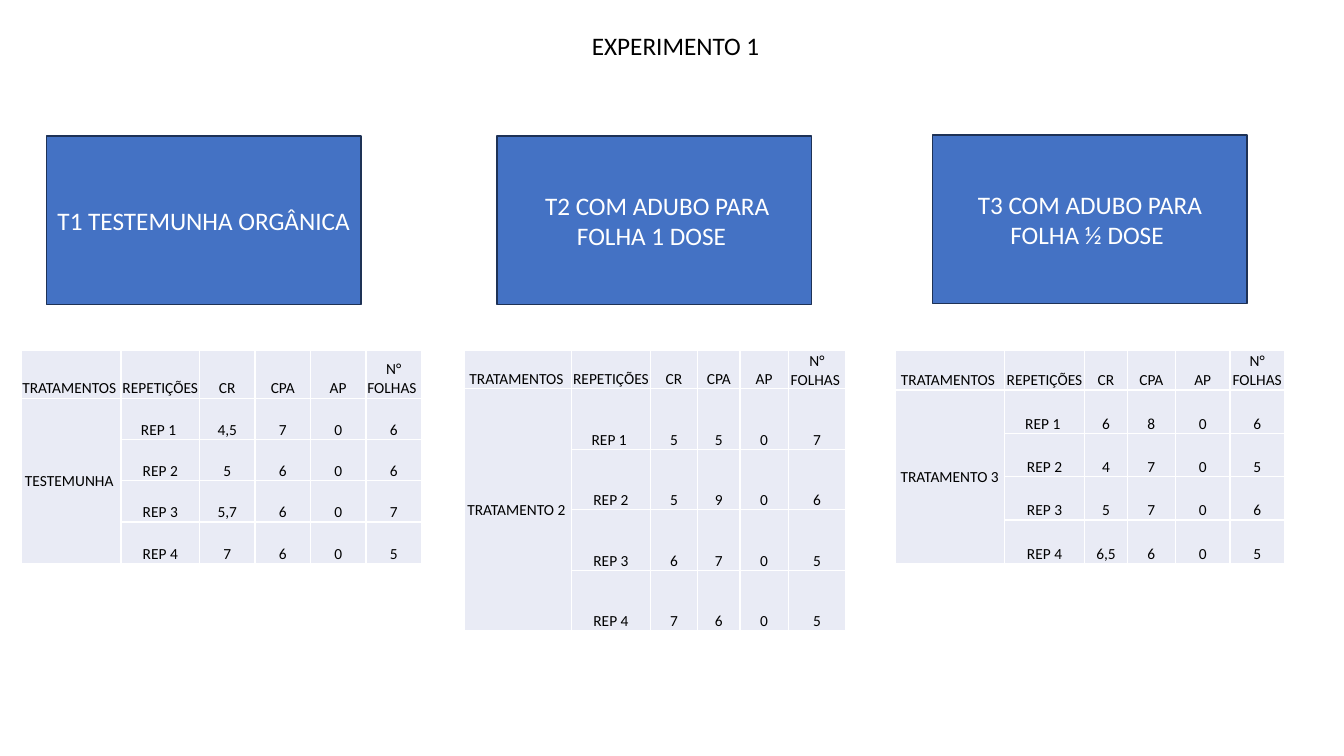
from pptx import Presentation
from pptx.dml.color import RGBColor
from pptx.enum import shapes, text
from pptx.oxml import parse_xml
from pptx.oxml import ns
from pptx.util import Inches, Pt

BLACK = RGBColor(0x00, 0x00, 0x00)
WHITE = RGBColor(0xFF, 0xFF, 0xFF)
BLUE = RGBColor(0x44, 0x72, 0xC4)
NAVY = RGBColor(0x1E, 0x32, 0x56)
PALE = RGBColor(0xE9, 0xEB, 0xF5)

TITLE = "EXPERIMENTO 1"
HEADINGS = ["TRATAMENTOS ", "REPETIÇÕES ", "CR", "CPA", "AP", "N° FOLHAS "]
REPETITIONS = ["REP 1 ", "REP 2", "REP 3", "REP 4"]
TREATMENTS = [
    {
        "label": "T1 TESTEMUNHA ORGÂNICA", "box": (0.46, 1.35),
        "group": "TESTEMUNHA ", "left": 0.21,
        "columns": [0.99, 0.78, 0.55, 0.55, 0.55, 0.55],
        "heights": (0.47, 0.41),
        "values": [("4,5", "7", "0", "6"), ("5", "6", "0", "6"),
                   ("5,7", "6", "0", "7"), ("7", "6", "0", "5")],
    },
    {
        "label": " T2 COM ADUBO PARA FOLHA 1 DOSE ", "box": (4.93, 1.35),
        "group": "TRATAMENTO 2 ", "left": 4.61,
        "columns": [1.06, 0.78, 0.47, 0.42, 0.48, 0.57],
        "heights": (0.28, 0.6),
        "values": [("5", "5", "0", "7"), ("5", "9", "0", "6"),
                   ("6", "7", "0", "5"), ("7", "6", "0", "5")],
    },
    {
        "label": "T3 COM ADUBO PARA FOLHA ½ DOSE ", "box": (9.25, 1.34),
        "group": "TRATAMENTO 3", "left": 8.88,
        "columns": [1.08, 0.8, 0.42, 0.48, 0.54, 0.54],
        "heights": (0.39, 0.43),
        "values": [("6", "8", "0", "6"), ("4", "7", "0", "5"),
                   ("5", "7", "0", "6"), ("6,5", "6", "0", "5")],
    },
]
BOX_SIZE = (3.12, 1.67)
TABLE_TOP = 3.48
CELL_FORMAT = {
    "margin_left": Inches(0.01), "margin_right": Inches(0.01),
    "margin_top": Inches(0.01), "margin_bottom": 0,
    "vertical_anchor": text.MSO_ANCHOR.BOTTOM,
}


def apply(target, values):
    """Set each named attribute on the target."""
    for name, value in values.items():
        setattr(target, name, value)


def write(frame, words, size, color, align):
    """Put one formatted paragraph in a text frame."""
    para = frame.paragraphs[0]
    para.alignment = align
    span = para.add_run()
    span.text = words
    apply(span.font, {"name": "Calibri", "size": Pt(size), "bold": False})
    span.font.color.rgb = color


def add_title(page):
    """Place the slide title."""
    title = page.shapes.title
    apply(title, {"left": Inches(5.77), "top": Inches(0.25),
                  "width": Inches(1.94), "height": Inches(0.4)})
    apply(title.text_frame, {"word_wrap": False,
                             "auto_size": text.MSO_AUTO_SIZE.SHAPE_TO_FIT_TEXT,
                             "vertical_anchor": text.MSO_ANCHOR.TOP})
    write(title.text_frame, TITLE, 18, BLACK, text.PP_ALIGN.LEFT)


def add_box(page, treatment):
    """Draw the blue box that names a treatment."""
    place = [Inches(length) for length in treatment["box"] + BOX_SIZE]
    box = page.shapes.add_shape(shapes.MSO_SHAPE.RECTANGLE, *place)
    box.shadow.inherit = False
    box.fill.solid()
    box.fill.fore_color.rgb = BLUE
    box.line.color.rgb = NAVY
    box.line.width = Pt(1)
    apply(box.text_frame, {"word_wrap": True,
                           "vertical_anchor": text.MSO_ANCHOR.MIDDLE})
    write(box.text_frame, treatment["label"], 18, WHITE, text.PP_ALIGN.CENTER)


def format_cell(cell):
    """Give a cell its margins, white borders and pale fill."""
    apply(cell, CELL_FORMAT)
    properties = cell._tc.get_or_add_tcPr()
    for side in "LRTB":
        properties.append(parse_xml(
            f'<a:ln{side} {ns.nsdecls("a")} w="{Pt(1)}"><a:solidFill>'
            f'<a:srgbClr val="{WHITE}"/></a:solidFill></a:ln{side}>'))
    cell.fill.solid()
    cell.fill.fore_color.rgb = PALE


def add_results(page, treatment):
    """Draw the table of results for a treatment."""
    rows = [HEADINGS]
    for index, (repetition, values) in enumerate(zip(REPETITIONS, treatment["values"])):
        group = treatment["group"] if index == 0 else ""
        rows.append([group, repetition, *values])
    header, body = treatment["heights"]
    heights = [header] + [body] * len(REPETITIONS)
    table = page.shapes.add_table(
        len(rows), len(HEADINGS), Inches(treatment["left"]), Inches(TABLE_TOP),
        Inches(sum(treatment["columns"])), Inches(sum(heights))).table
    apply(table, {"first_row": False, "horz_banding": False})
    for column, width in zip(table.columns, treatment["columns"]):
        column.width = Inches(width)
    for row, height, entries in zip(table.rows, heights, rows):
        row.height = Inches(height)
        for cell, words in zip(row.cells, entries):
            format_cell(cell)
            if words:
                write(cell.text_frame, words, 11, BLACK, text.PP_ALIGN.CENTER)
    group_cell = table.cell(1, 0)
    group_cell.merge(table.cell(len(REPETITIONS), 0))
    group_cell.vertical_anchor = text.MSO_ANCHOR.MIDDLE


def main():
    """Build the experiment slide and save it."""
    deck = Presentation()
    apply(deck, {"slide_width": Inches(13.33), "slide_height": Inches(7.5)})
    page = deck.slides.add_slide(deck.slide_layouts[5])
    add_title(page)
    for treatment in TREATMENTS:
        add_box(page, treatment)
    for treatment in TREATMENTS:
        add_results(page, treatment)
    deck.save("out.pptx")


if __name__ == "__main__":
    main()
